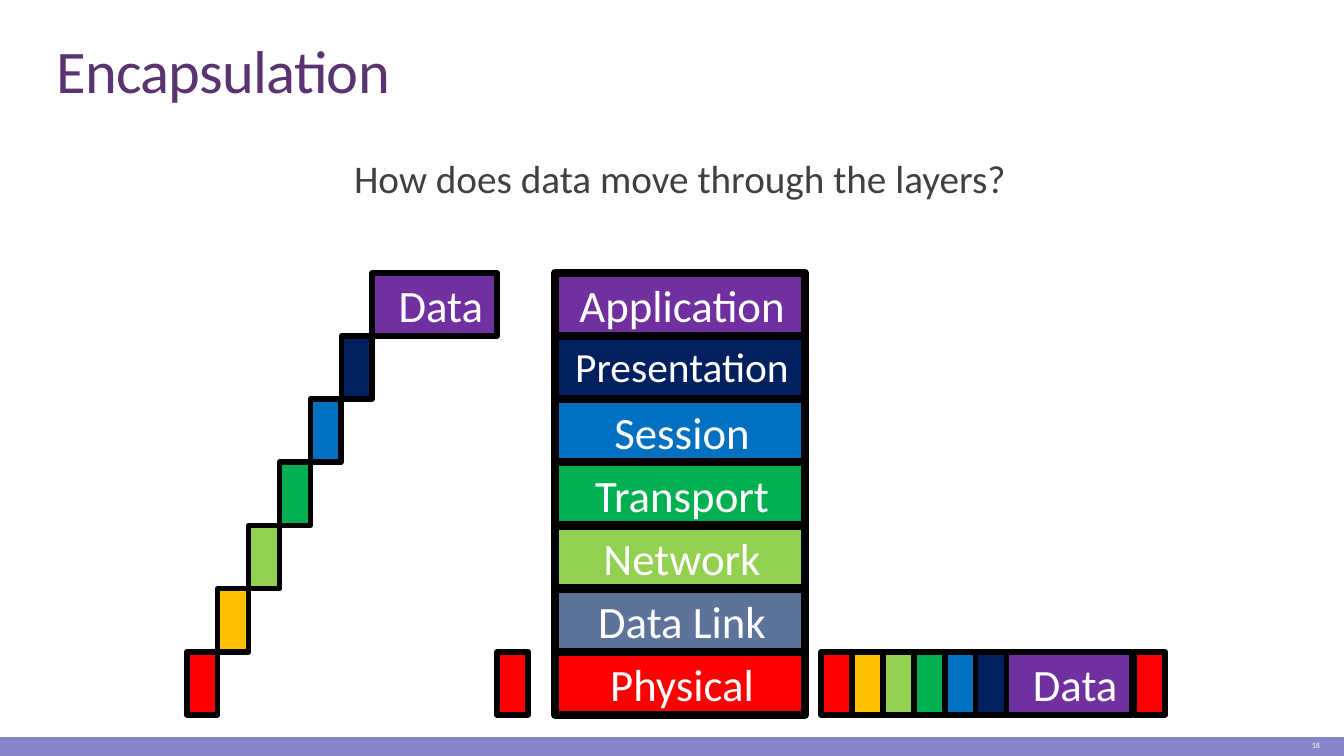
from lxml import etree
from pptx import Presentation
from pptx.dml.color import RGBColor
from pptx.enum.shapes import MSO_SHAPE
from pptx.enum.text import MSO_ANCHOR, MSO_AUTO_SIZE, PP_ALIGN
from pptx.oxml.ns import qn
from pptx.util import Inches, Pt

RECT = MSO_SHAPE.RECTANGLE
TOP, MIDDLE, BOTTOM = MSO_ANCHOR.TOP, MSO_ANCHOR.MIDDLE, MSO_ANCHOR.BOTTOM
LEFT, CENTER, RIGHT = PP_ALIGN.LEFT, PP_ALIGN.CENTER, PP_ALIGN.RIGHT
NO_FIT = MSO_AUTO_SIZE.NONE

BLACK = RGBColor(0x00, 0x00, 0x00)
WHITE = RGBColor(0xFF, 0xFF, 0xFF)
GRAY = RGBColor(0x40, 0x40, 0x40)
PLUM = RGBColor(0x5A, 0x34, 0x71)
LAVENDER = RGBColor(0x87, 0x84, 0xC7)
PURPLE = RGBColor(0x70, 0x30, 0xA0)
NAVY = RGBColor(0x00, 0x20, 0x60)
BLUE = RGBColor(0x00, 0x70, 0xC0)
GREEN = RGBColor(0x00, 0xB0, 0x50)
LIME = RGBColor(0x92, 0xD0, 0x50)
SLATE = RGBColor(0x5D, 0x73, 0x9A)
AMBER = RGBColor(0xFF, 0xC0, 0x00)
RED = RGBColor(0xFF, 0x00, 0x00)

WIDTH = 10
HEIGHT = WIDTH * 9 / 16
ROW, HEADER_W, DATA_W = 0.47, 0.23, 0.93
STACK_TOP = 2.03
LAYERS = [
    ("Application", PURPLE, 24),
    ("Presentation", NAVY, 22.2),
    ("Session", BLUE, 24),
    ("Transport", GREEN, 24),
    ("Network", LIME, 24),
    ("Data Link", SLATE, 24),
    ("Physical", RED, 24),
]
HEADERS = [NAVY, BLUE, GREEN, LIME, AMBER, RED]
LAST_ROW = STACK_TOP + len(HEADERS) * ROW


def write(sp, text, size, color, align, anchor, insets=(0.1, 0.05, 0.1, 0.05), **para):
    """Put one formatted paragraph in a shape and return it."""
    tf = sp.text_frame
    frame = {"word_wrap": True, "auto_size": NO_FIT, "vertical_anchor": anchor}
    sides = ("margin_left", "margin_top", "margin_right", "margin_bottom")
    frame.update(zip(sides, map(Inches, insets)))
    p = tf.paragraphs[0]
    r = p.add_run()
    r.text = text
    font = {"name": "Calibri", "size": Pt(size)}
    for obj, values in ((tf, frame), (p, {"alignment": align, **para}), (r.font, font)):
        for name, value in values.items():
            setattr(obj, name, value)
    r.font.color.rgb = color
    return p


def place(sp, box):
    """Move a shape to a box of left, top, width and height in inches."""
    for name, value in zip(("left", "top", "width", "height"), box):
        setattr(sp, name, Inches(value))


def add_block(s, box, fill, line=3):
    """Add a filled rectangle, outlined in black when line is not zero."""
    sp = s.shapes.add_shape(RECT, *map(Inches, box))
    sp.shadow.inherit = False
    sp.fill.solid()
    sp.fill.fore_color.rgb = fill
    if line:
        sp.line.color.rgb = BLACK
        sp.line.width = Pt(line)
    else:
        sp.line.fill.background()
    return sp


def add_label(sp, text, size=24):
    """Write a white label, slightly indented, in a block or text box."""
    p = write(sp, text, size, WHITE, CENTER, TOP, (0.07, 0.04, 0.07, 0.04))
    p._p.get_or_add_pPr().set("marL", str(Inches(0.09)))


def add_headings(s, left, width):
    """Fill the title and body placeholders."""
    title, body = s.shapes.title, s.placeholders[1]
    place(title, (left, 0.24, width, 0.6))
    p = write(title, "Encapsulation", 32.4, PLUM, LEFT, BOTTOM, line_spacing=0.85)
    p.runs[0].font._element.set("spc", "-40")
    place(body, (left, 1.14, width, 3.93))
    p = write(body, "How does data move through the layers?", 21, GRAY, CENTER, TOP,
              (0, 0.05, 0, 0.05), line_spacing=0.9, space_before=Pt(9), space_after=Pt(1.5))
    pPr = p._p.get_or_add_pPr()
    pPr.set("marL", "0")
    pPr.set("indent", "0")
    etree.SubElement(pPr, qn("a:buNone"))


def add_footer(s, height):
    """Add the bottom band with the slide number."""
    add_block(s, (0, HEIGHT - height, WIDTH, height), LAVENDER, 0)
    sp = s.shapes.add_textbox(*map(Inches, (8.84, 5.46, 1.08, 0.17)))
    write(sp, "18", 4.3, WHITE, RIGHT, MIDDLE)


def add_stack(s, left, top, width):
    """Add the column of layers, each a block under a text box."""
    for i, (name, fill, size) in enumerate(LAYERS):
        y = top + i * ROW
        add_block(s, (left, y, width, ROW), fill, 4.5)
        sp = s.shapes.add_textbox(*map(Inches, (left - 0.02, y, width - 0.02, ROW)))
        add_label(sp, name, size)


def add_packet(s, left, top, step, trailer_gap=0):
    """Add a data block, headers running left by one step down each, and a trailer."""
    add_label(add_block(s, (left, top, DATA_W, ROW), PURPLE), "Data")
    for i, fill in enumerate(HEADERS, 1):
        add_block(s, (left - i * HEADER_W, top + i * step, HEADER_W, ROW), fill)
    add_block(s, (left + DATA_W + trailer_gap, LAST_ROW, HEADER_W, ROW), RED)


def main():
    """Build and save the slide."""
    prs = Presentation()
    prs.slide_width, prs.slide_height = Inches(WIDTH), Inches(HEIGHT)
    s = prs.slides.add_slide(prs.slide_layouts[1])
    add_headings(s, 0.32, 9.48)
    add_footer(s, 0.14)
    add_stack(s, 4.13, STACK_TOP, 1.86)
    add_packet(s, 2.77, STACK_TOP, ROW)
    add_packet(s, 7.49, LAST_ROW, 0, 0.02)
    prs.save("out.pptx")


if __name__ == "__main__":
    main()
